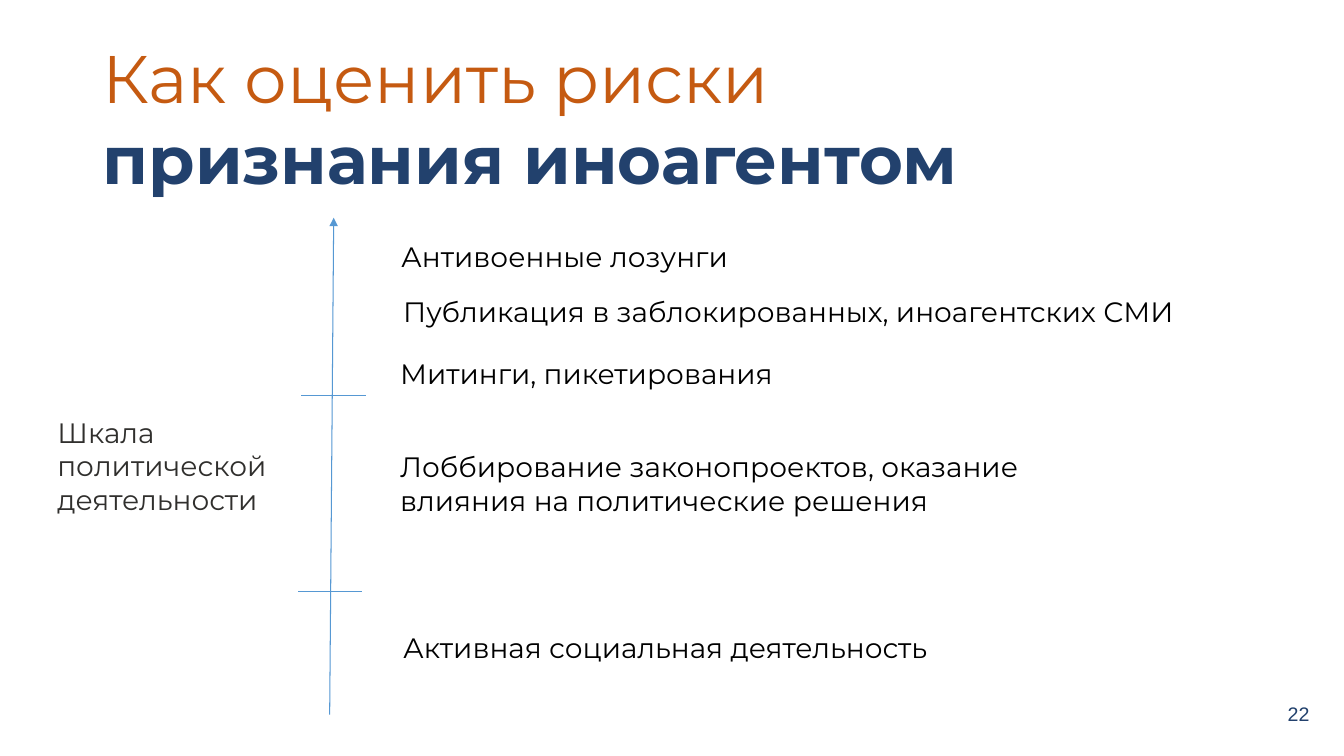
from lxml import etree
from pptx import Presentation
from pptx.dml.color import RGBColor
from pptx.enum.shapes import MSO_CONNECTOR as Conn
from pptx.enum.text import MSO_ANCHOR as Anchor, MSO_AUTO_SIZE as AutoSize, PP_ALIGN as Align
from pptx.oxml.ns import qn
from pptx.util import Inches, Pt

COLORS = {
    "orange": "C55A11",
    "navy": "22416D",
    "line": "5698D3",
    "gray": "302F2D",
    "black": "000000",
}


class SlideBuilder:
    def __init__(self, slide, font="Montserrat", size=20):
        self.s = slide
        self.font = font
        self.size = size

    def color(self, name):
        return RGBColor.from_string(COLORS[name])

    def text(self, box, runs, size=None, font=None, wrap=True, grow=False,
             inset=0.05, align=Align.LEFT, anchor=Anchor.TOP):
        """Add a text box; each run is (text, color name, bold)."""
        sp = self.s.shapes.add_textbox(*map(Inches, box))
        tf = sp.text_frame
        tf.word_wrap = wrap
        tf.auto_size = AutoSize.SHAPE_TO_FIT_TEXT if grow else AutoSize.NONE
        tf.vertical_anchor = anchor
        tf.margin_left = tf.margin_right = Inches(0.1)
        tf.margin_top = tf.margin_bottom = Inches(inset)
        p = tf.paragraphs[0]
        p.alignment = align
        for content, color, bold in runs:
            r = p.add_run()
            r.text = content
            r.font.name = font or self.font
            r.font.size = Pt(size or self.size)
            r.font.bold = bold
            r.font.color.rgb = self.color(color)

    def line(self, start, end, arrow=False):
        points = map(Inches, (*start, *end))
        c = self.s.shapes.add_connector(Conn.STRAIGHT, *points)
        c.line.color.rgb = self.color("line")
        c.line.width = Pt(0.75)
        sp_pr = c._element.spPr
        if arrow:
            etree.SubElement(sp_pr.find(qn("a:ln")), qn("a:tailEnd"), type="triangle")
        etree.SubElement(sp_pr, qn("a:effectLst"))


def main():
    prs = Presentation()
    prs.slide_width, prs.slide_height = Inches(13.33), Inches(7.5)
    b = SlideBuilder(prs.slides.add_slide(prs.slide_layouts[6]))

    # Title and slide number
    b.text((0.92, 0.26, 9.99, 0.98),
           [("Как оценить риски ", "orange", False),
            ("признания иноагентом", "navy", True)], size=48, inset=0.1)
    b.text((12.67, 6.85, 0.42, 0.46), [("22", "navy", False)], size=14,
           font="Arial", inset=0.1, align=Align.CENTER, anchor=Anchor.MIDDLE)

    # Scale axis with its two divisions
    b.line((3.27, 7.09), (3.31, 2.16), arrow=True)
    for left, right, y in [(2.99, 3.63, 3.92), (2.96, 3.59, 5.87)]:
        b.line((left, y), (right, y))
    b.text((0.47, 4.07, 2.38, 1.11),
           [("Шкала политической деятельности", "gray", False)], grow=True)

    # Activities along the scale, from high risk to low
    activities = [
        ((3.88, 2.33, 3.47, 0.44), "Антивоенные лозунги", False),
        ((3.9, 2.87, 7.92, 0.44), "Публикация в заблокированных, иноагентских СМИ", False),
        ((3.87, 3.49, 3.96, 0.44), "Митинги, пикетирования", False),
        ((3.87, 4.41, 7.61, 0.77),
         "Лоббирование законопроектов, оказание влияния на политические решения", True),
        ((3.9, 6.21, 5.46, 0.44), "Активная социальная деятельность", False),
    ]
    for box, activity, wrap in activities:
        b.text(box, [(activity, "black", False)], wrap=wrap, grow=True)

    prs.save("out.pptx")


if __name__ == "__main__":
    main()
